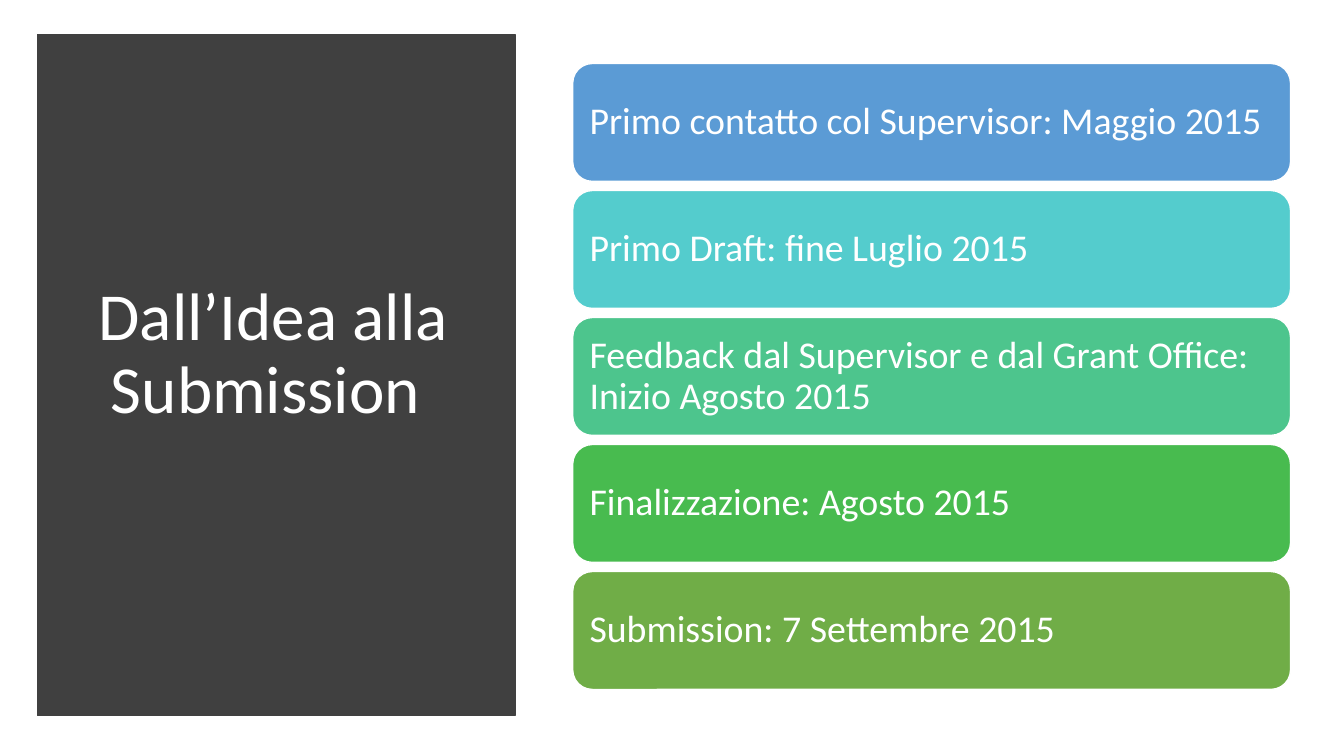
from pptx import Presentation
from pptx import util as u
from pptx.dml.color import RGBColor
from pptx.enum import shapes, text

# Content
TITLE = "Dall’Idea alla Submission "
STEPS = [
    ("Primo contatto col Supervisor: Maggio 2015", "blue"),
    ("Primo Draft: fine Luglio 2015", "aqua"),
    ("Feedback dal Supervisor e dal Grant Office: Inizio Agosto 2015", "mint"),
    ("Finalizzazione: Agosto 2015", "green"),
    ("Submission: 7 Settembre 2015", "olive"),
]
COLORS = {
    "white": "FFFFFF", "dark": "404040", "blue": "5B9BD5", "aqua": "54CCCD",
    "mint": "4DC58D", "green": "48BB4F", "olive": "70AD47",
}
FONT = "Calibri"

# Layout in inches: left, top, width, height
SIZE = (13.33, 7.5)
PANEL = (0.37, 0.34, 4.74, 6.76)
HEAD = (0.81, 0.81, 3.8, 5.43)
LEFT, TOP, WIDTH, HIGH = 5.68, 0.63, 7.12, 1.17
PITCH = 1.26  # bar height plus gap
INSET = 0.11


def color(name):
    return RGBColor.from_string(COLORS[name])


def add_box(slide, kind, box, fill, line, weight):
    shape = slide.shapes.add_shape(kind, *map(u.Inches, box))
    shape.shadow.inherit = False
    shape.fill.solid()
    shape.fill.fore_color.rgb = color(fill)
    shape.line.color.rgb = color(line)
    shape.line.width = u.Pt(weight)
    return shape


def write(shape, words, size, align):
    frame = shape.text_frame
    frame.text = words
    frame.word_wrap = True
    frame.auto_size = text.MSO_AUTO_SIZE.NONE
    frame.vertical_anchor = text.MSO_ANCHOR.MIDDLE
    para = frame.paragraphs[0]
    para.alignment = align
    para.line_spacing = 0.9
    font = para.runs[0].font
    font.name, font.size = FONT, u.Pt(size)
    font.color.rgb = color("white")
    return frame


def main():
    deck = Presentation()
    deck.slide_width, deck.slide_height = map(u.Inches, SIZE)
    slide = deck.slides.add_slide(deck.slide_layouts[5])

    # Title on a dark panel
    title = slide.shapes.title
    title.left, title.top, title.width, title.height = map(u.Inches, HEAD)
    write(title, TITLE, 48, text.PP_ALIGN.CENTER)
    panel = add_box(slide, shapes.MSO_SHAPE.RECTANGLE, PANEL,
                    "dark", "dark", 10)
    panel.line.width = u.Pt(1)
    title._element.addprevious(panel._element)

    # Stack of steps
    for row, (words, fill) in enumerate(STEPS):
        box = (LEFT, TOP + row * PITCH, WIDTH, HIGH)
        bar = add_box(slide, shapes.MSO_SHAPE.ROUNDED_RECTANGLE, box,
                      fill, "white", 1)
        frame = write(bar, words, 27, text.PP_ALIGN.LEFT)
        frame.margin_left = frame.margin_right = u.Inches(INSET)
        frame.margin_top = frame.margin_bottom = u.Inches(INSET)

    deck.save("out.pptx")


if __name__ == "__main__":
    main()
